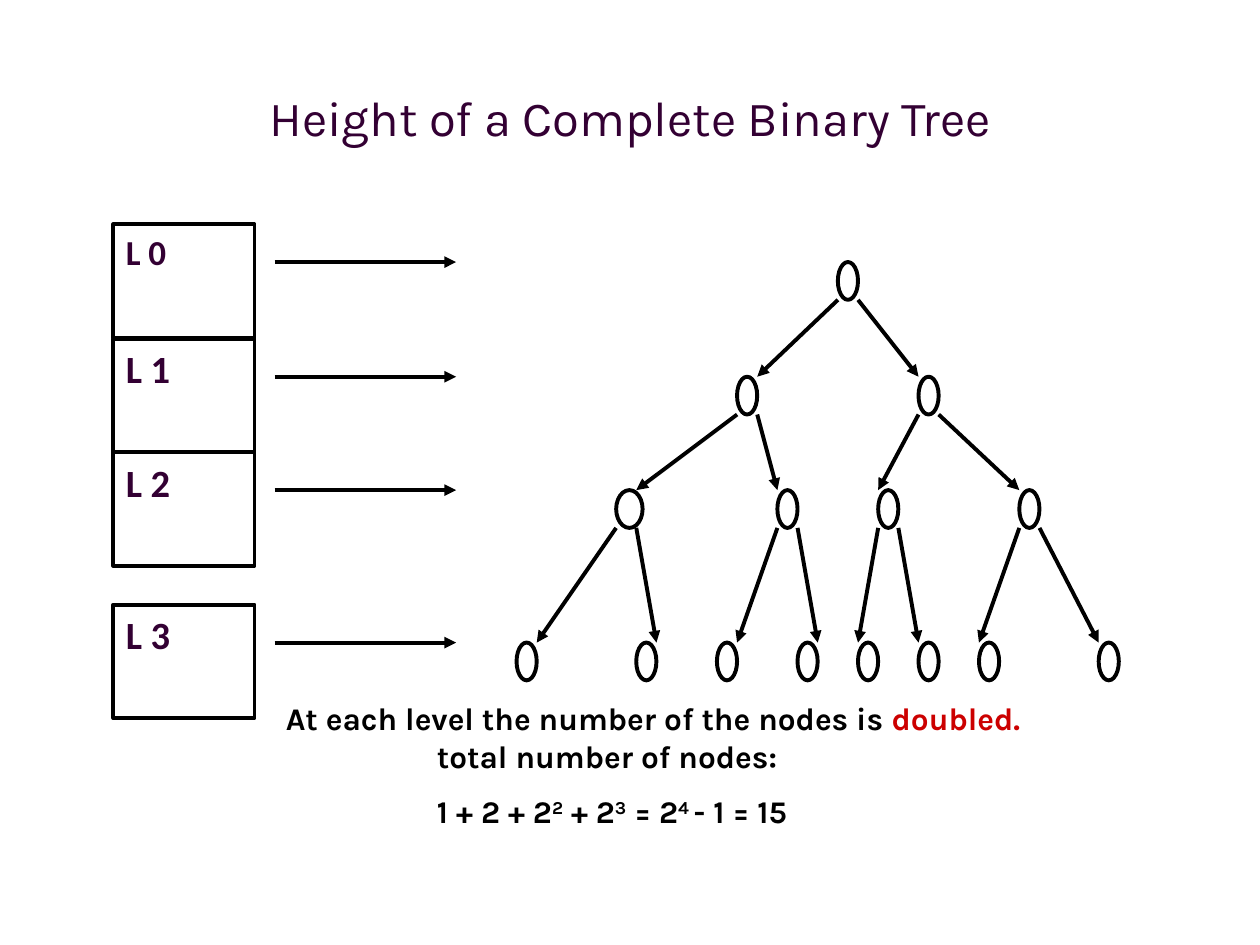
"""Build a slide on the height of a complete binary tree."""
from dataclasses import dataclass

from lxml.etree import SubElement
from pptx import Presentation
from pptx.dml.color import RGBColor as Rgb
from pptx.enum.shapes import MSO_CONNECTOR as Link, MSO_SHAPE as Preset
from pptx.enum.text import MSO_ANCHOR as Anchor, PP_ALIGN as Align
from pptx.oxml.ns import qn
from pptx.util import Inches, Pt


@dataclass(frozen=True)
class Theme:
    ink: Rgb = Rgb.from_string("000000")
    paper: Rgb = Rgb.from_string("FFFFFF")
    plum: Rgb = Rgb.from_string("330033")
    accent: Rgb = Rgb.from_string("CC0000")
    body_font: str = "Karla"
    label_font: str = "Calibri"
    title_size: int = 28
    body_size: int = 18
    label_size: int = 22
    first_label_size: int = 20
    stroke: float = 2.25


class TreeSlide:
    """Draws each kind of element on one slide in one style."""

    def __init__(self, slide, theme):
        self.shapes = slide.shapes
        self.theme = theme

    def style(self, run, size, color, font, bold=False):
        run.font.size = Pt(size)
        run.font.color.rgb = color
        run.font.name = font
        run.font.bold = bold

    def outline(self, preset, left, top, width, height):
        shape = self.shapes.add_shape(
            preset, Inches(left), Inches(top), Inches(width), Inches(height))
        shape.shadow.inherit = False
        shape.fill.solid()
        shape.fill.fore_color.rgb = self.theme.paper
        shape.line.color.rgb = self.theme.ink
        shape.line.width = Pt(self.theme.stroke)
        return shape

    def node(self, left, top, width, height):
        self.outline(Preset.OVAL, left, top, width, height)

    def level_box(self, label, size, left, top, width, height):
        frame = self.outline(Preset.RECTANGLE, left, top, width, height).text_frame
        frame.text = label
        frame.vertical_anchor = Anchor.TOP
        frame.paragraphs[0].alignment = Align.LEFT
        self.style(frame.paragraphs[0].runs[0], size, self.theme.plum,
                   self.theme.label_font, bold=True)

    def arrow(self, x1, y1, x2, y2):
        link = self.shapes.add_connector(
            Link.STRAIGHT, Inches(x1), Inches(y1), Inches(x2), Inches(y2))
        link.line.color.rgb = self.theme.ink
        link.line.width = Pt(self.theme.stroke)
        SubElement(link.line._get_or_add_ln(), qn("a:tailEnd"), type="triangle")
        SubElement(link._element.spPr, qn("a:effectLst"))

    def text_area(self, left, top, width, height):
        frame = self.shapes.add_textbox(
            Inches(left), Inches(top), Inches(width), Inches(height)).text_frame
        frame.word_wrap = True
        return frame

    def title(self, wording, *place):
        frame = self.text_area(*place)
        frame.text = wording
        frame.vertical_anchor = Anchor.MIDDLE
        frame.paragraphs[0].alignment = Align.CENTER
        self.style(frame.paragraphs[0].runs[0], self.theme.title_size,
                   self.theme.plum, self.theme.body_font)

    def summary(self, lines, *place):
        frame = self.text_area(*place)
        for index, (indent, gap, pieces) in enumerate(lines):
            line = frame.add_paragraph() if index else frame.paragraphs[0]
            line.space_before = Pt(gap)
            line._p.get_or_add_pPr().set("marL", str(Inches(indent)))
            for wording, color, raised in pieces:
                run = line.add_run()
                run.text = wording
                self.style(run, self.theme.body_size, color,
                           self.theme.body_font, bold=True)
                if raised:
                    run._r.get_or_add_rPr().set("baseline", "30000")


NODE_WIDTH, NODE_HEIGHT, WIDE_NODE = 0.16, 0.3, 0.21
LEVEL_TOPS = [2.08, 2.99, 3.89, 5.1]
NODE_LEFTS = [
    [6.65],
    [5.85, 7.29],
    [4.89, 6.17, 6.97, 8.09],
    [4.1, 5.05, 5.69, 6.33, 6.81, 7.29, 7.77, 8.72],
]
ARROW_ENDS = [
    [6.01, 7.29],
    [5.05, 6.17, 6.97, 8.09],
    [4.26, 5.21, 5.85, 6.49, 6.81, 7.29, 7.77, 8.72],
]


def draw_tree(page):
    for level, (top, lefts) in enumerate(zip(LEVEL_TOPS, NODE_LEFTS)):
        for index, left in enumerate(lefts):
            wide = (level, index) == (2, 0)
            page.node(left, top, WIDE_NODE if wide else NODE_WIDTH, NODE_HEIGHT)
    for level, ends in enumerate(ARROW_ENDS):
        for child, end in enumerate(ends):
            parent, side = divmod(child, 2)
            page.arrow(NODE_LEFTS[level][parent] + side * NODE_WIDTH,
                       LEVEL_TOPS[level] + NODE_HEIGHT, end, LEVEL_TOPS[level + 1])


def draw_levels(page):
    for level, top in enumerate(LEVEL_TOPS):
        size = page.theme.label_size if level else page.theme.first_label_size
        page.level_box(f"L {level}", size, 0.9, top - 0.3, 1.12, 0.9)
        page.arrow(2.18, top, 3.62, top)


def main():
    deck = Presentation()
    deck.slide_width, deck.slide_height = Inches(10), Inches(7.5)
    theme = Theme()
    page = TreeSlide(deck.slides.add_slide(deck.slide_layouts[6]), theme)
    page.title("Height of a Complete Binary Tree", 0.5, 0.3, 9, 1.25)
    draw_tree(page)
    draw_levels(page)
    formula = ["1 + 2 + 2", "2", " + 2", "3", " = 2", "4 ", "- 1 = 15"]
    page.summary([
        (0, 0, [("At each level the number of the nodes is ", theme.ink, False),
                ("doubled.", theme.accent, False)]),
        (1.2, 0, [("total number of nodes:", theme.ink, False)]),
        (1.2, 10, [(term, theme.ink, index % 2 == 1)
                   for index, term in enumerate(formula)]),
    ], 2.17, 5.5, 7.67, 1.77)
    deck.save("out.pptx")


if __name__ == "__main__":
    main()
